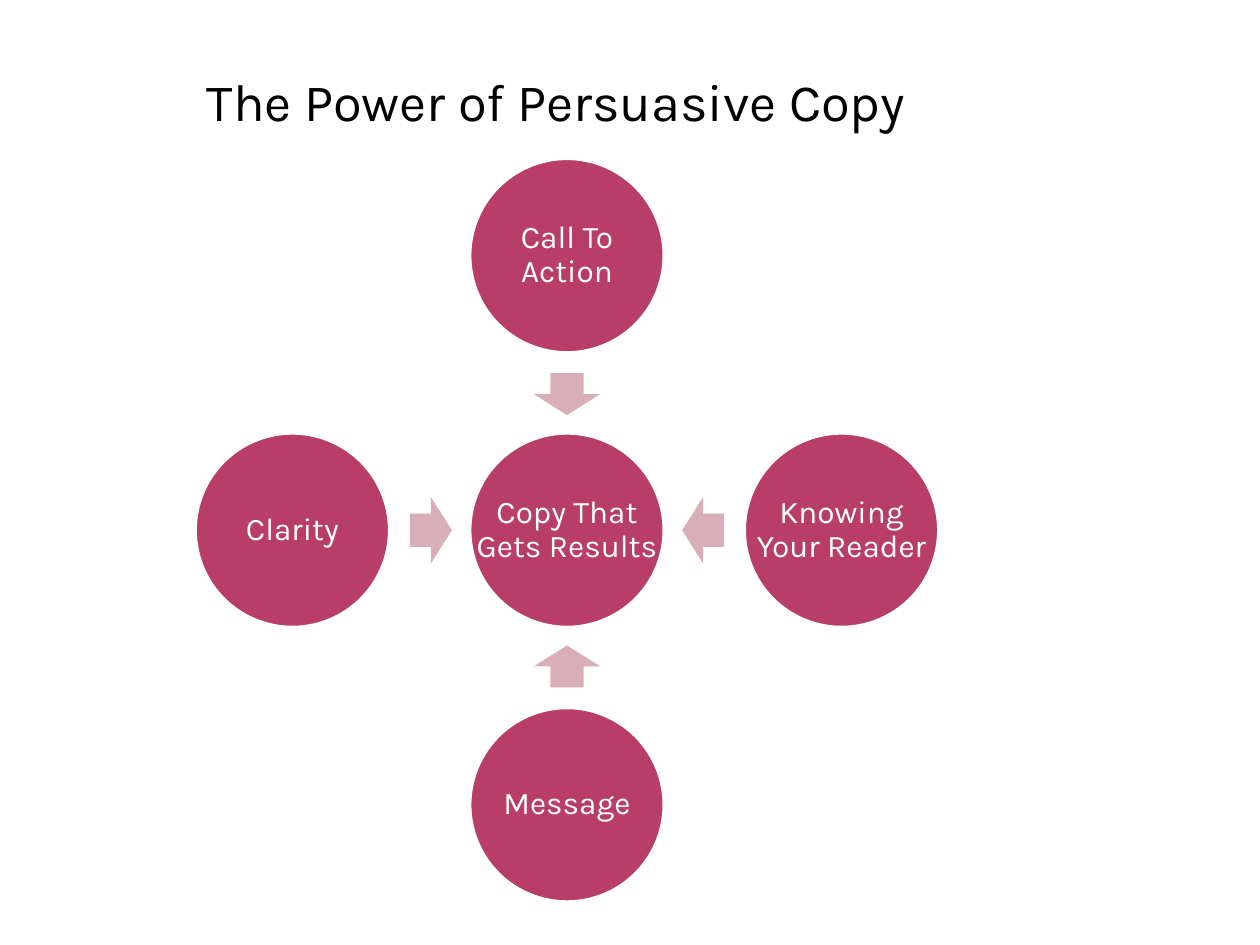
from dataclasses import dataclass
from math import cos, radians, sin

from pptx import Presentation
from pptx.dml.color import RGBColor
from pptx.enum.shapes import MSO_SHAPE
from pptx.enum.text import MSO_ANCHOR, PP_ALIGN
from pptx.util import Pt


@dataclass(frozen=True)
class Theme:
    font: str = "Karla"
    title_size: int = 30
    label_size: int = 18
    ink: RGBColor = RGBColor(0x00, 0x00, 0x00)
    white: RGBColor = RGBColor(0xFF, 0xFF, 0xFF)
    circle: RGBColor = RGBColor(0xB8, 0x3D, 0x68)
    arrow: RGBColor = RGBColor(0xD8, 0xAF, 0xB9)


class Deck:
    """Draws elements on one slide; all lengths are in points."""

    def __init__(self, s, theme):
        self.s = s
        self.theme = theme

    def shape(self, kind, cx, cy, w, h, fill):
        sp = self.s.shapes.add_shape(
            kind, Pt(cx - w / 2), Pt(cy - h / 2), Pt(w), Pt(h))
        sp.shadow.inherit = False
        sp.fill.solid()
        sp.fill.fore_color.rgb = fill
        sp.line.fill.background()
        return sp

    def text(self, text, x, y, w, h, size, color):
        tf = self.s.shapes.add_textbox(Pt(x), Pt(y), Pt(w), Pt(h)).text_frame
        tf.word_wrap = True
        tf.text = text
        p = tf.paragraphs[0]
        p.alignment = PP_ALIGN.CENTER
        font = p.runs[0].font
        font.name, font.size = self.theme.font, Pt(size)
        font.color.rgb = color
        return tf

    def circle(self, text, cx, cy, d):
        t = self.theme
        sp = self.shape(MSO_SHAPE.OVAL, cx, cy, d, d, t.circle)
        sp.line.color.rgb = t.white
        sp.line.width = Pt(3.15)
        # The label uses the full square, wider than the oval's own text area
        tf = self.text(text, cx - d / 2, cy - d / 2, d, d, t.label_size, t.white)
        tf.vertical_anchor = MSO_ANCHOR.MIDDLE
        tf.margin_left = tf.margin_right = Pt(2)
        tf.margin_top = tf.margin_bottom = Pt(2)
        tf.paragraphs[0].line_spacing = 0.9

    def arrow(self, cx, cy, angle):
        sp = self.shape(MSO_SHAPE.LEFT_ARROW, cx, cy, 24, 38, self.theme.arrow)
        sp.rotation = angle


def main():
    prs = Presentation()
    prs.slide_width, prs.slide_height = Pt(720), Pt(540)
    theme = Theme()
    deck = Deck(prs.slides.add_slide(prs.slide_layouts[6]), theme)

    # Hub
    cx, cy, d = 324, 303, 112.3
    deck.circle("Copy That Gets Results", cx, cy, d)

    # Four ideas around the hub, each with an arrow pointing inward
    ideas = {270: "Call To Action", 0: "Knowing Your Reader",
             90: "Message", 180: "Clarity"}
    arrow_radius, idea_radius = 77.8, 156.9
    for angle, label in ideas.items():
        dx, dy = cos(radians(angle)), sin(radians(angle))
        deck.arrow(cx + arrow_radius * dx, cy + arrow_radius * dy, angle)
        deck.circle(label, cx + idea_radius * dx, cy + idea_radius * dy, d)

    # Title
    deck.text("The Power of Persuasive Copy", 12, 36, 612, 44,
              theme.title_size, theme.ink)

    prs.save("out.pptx")


if __name__ == "__main__":
    main()
